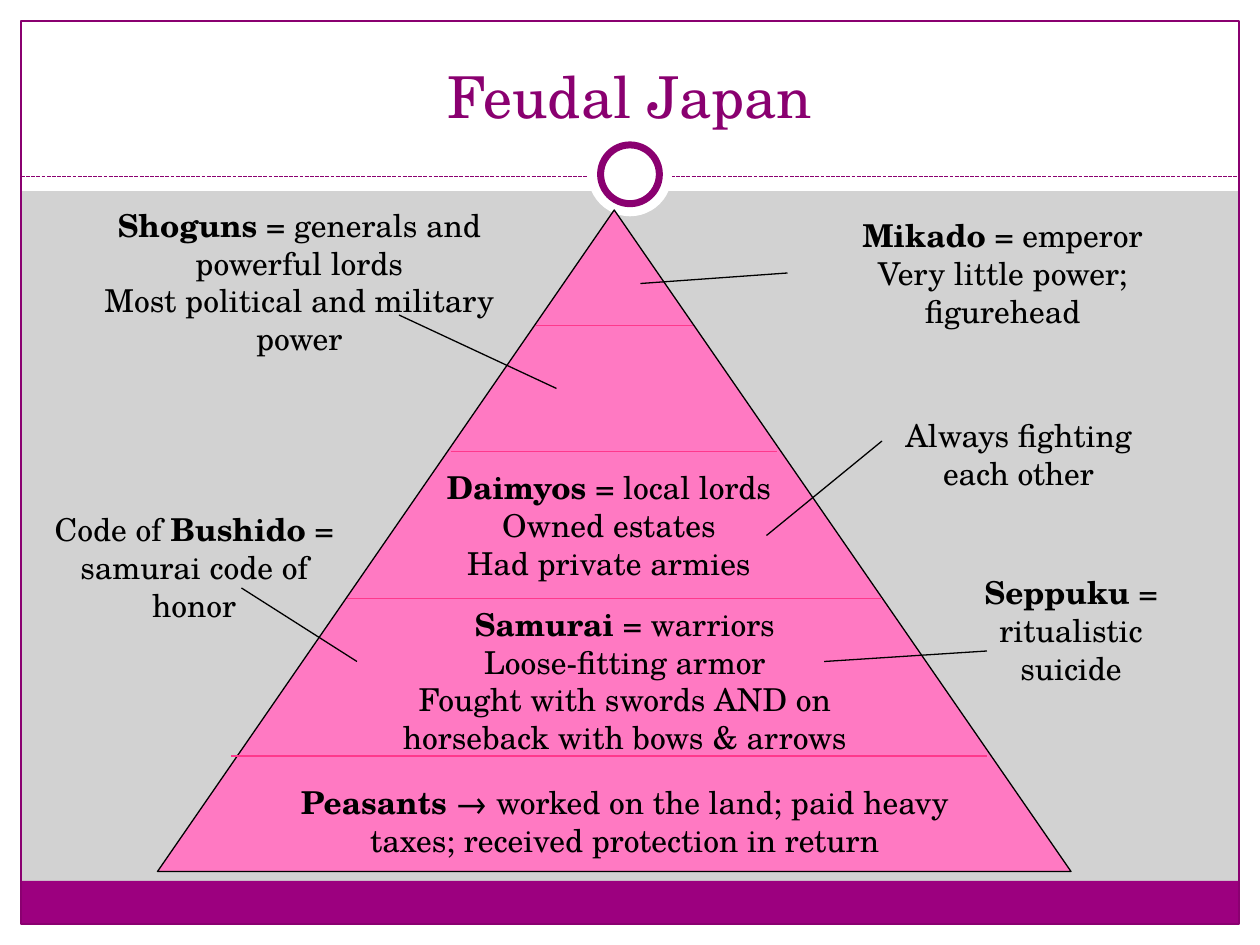
from lxml import etree
from pptx import Presentation
from pptx.dml.color import RGBColor
from pptx.enum.dml import MSO_LINE
from pptx.enum.shapes import MSO_CONNECTOR, MSO_SHAPE
from pptx.enum.text import MSO_ANCHOR, PP_ALIGN
from pptx.oxml.ns import qn
from pptx.util import Pt

PX = 7620  # 120 px to the inch
RECT, OVAL = MSO_SHAPE.RECTANGLE, MSO_SHAPE.OVAL
PEAK = MSO_SHAPE.ISOSCELES_TRIANGLE
LINE, DASH = MSO_CONNECTOR.STRAIGHT, MSO_LINE.SQUARE_DOT
CENTER = PP_ALIGN.CENTER
TOP, BOTTOM = MSO_ANCHOR.TOP, MSO_ANCHOR.BOTTOM
FONT = "TeX Gyre Schola"
PLUM, BLACK, WHITE = "8A0070", "000000", "FFFFFF"
hue = RGBColor.from_string

deck = Presentation()
deck.slide_width, deck.slide_height = 1200 * PX, 900 * PX
slide = deck.slides.add_slide(deck.slide_layouts[6])
slide.background.fill.solid()
slide.background.fill.fore_color.rgb = hue("D2D2D2")
shapes = slide.shapes


def add_form(kind, box, fill=None, edge=None, width=0.75):
    form = shapes.add_shape(kind, *[n * PX for n in box])
    form.shadow.inherit = False
    if fill:
        form.fill.solid()
        form.fill.fore_color.rgb = hue(fill)
    else:
        form.fill.background()
    if edge:
        form.line.color.rgb = hue(edge)
        form.line.width = Pt(width)
    else:
        form.line.fill.background()


def add_line(ends, color):
    line = shapes.add_connector(LINE, *[n * PX for n in ends])
    line.line.color.rgb = hue(color)
    line.line.width = Pt(0.75)
    etree.SubElement(line._element.spPr, qn("a:effectLst"))
    return line


# White margins and header, bottom bar, frame
for box in [(0, 880, 1200, 20), (0, 0, 1200, 182),
            (0, 0, 20, 900), (1180, 0, 20, 900)]:
    add_form(RECT, box, WHITE)
add_form(RECT, (20, 839, 1160, 41), "9C007F")
add_form(RECT, (20, 20, 1160, 860), edge=PLUM)

# Dashed divider with ring
add_line((20, 168, 1180, 168), PLUM).line.dash_style = DASH
add_form(OVAL, (560, 126, 80, 80), WHITE)
add_form(OVAL, (572, 138, 56, 56), WHITE, PLUM, 4)

# Pyramid and its tiers
add_form(PEAK, (150, 200, 870, 630), "FF79C2", BLACK)
for left, right, y in [(510, 660, 310), (430, 740, 430),
                       (330, 840, 570), (220, 940, 720)]:
    add_line((left, y, right, y), "FF388C")

# Leaders from tiers to notes
for ends in [(610, 270, 750, 260), (530, 370, 380, 300),
             (730, 510, 840, 420), (340, 630, 230, 560),
             (785, 630, 940, 620)]:
    add_line(ends, BLACK)

# Title and notes: words between stars are bold
title = ((40, 30, 1120, 100), 33, PLUM, BOTTOM, ["Feudal Japan"])
notes = [
    ((750, 200, 410, 85),
     ["*Mikado* = emperor", "Very little power; figurehead"]),
    ((60, 190, 450, 157),
     ["*Shoguns* = generals and powerful lords",
      "Most political and military power"]),
    ((410, 440, 340, 121),
     ["*Daimyos* = local lords", "Owned estates", "Had private armies"]),
    ((830, 390, 280, 85), ["Always fighting each other"]),
    ((340, 570, 510, 157),
     ["*Samurai* = warriors", "Loose-fitting armor",
      "Fought with swords AND on horseback with bows & arrows"]),
    ((250, 740, 690, 85),
     ["*Peasants *→ worked on the land; paid heavy taxes; "
      "received protection in return"]),
    ((40, 480, 290, 121), ["Code of *Bushido* = samurai code of honor"]),
    ((910, 540, 220, 121), ["*Seppuku* = ritualistic suicide"]),
]
texts = [title] + [(box, 18, BLACK, TOP, rows) for box, rows in notes]
for box, size, color, anchor, rows in texts:
    frame = shapes.add_textbox(*[n * PX for n in box]).text_frame
    frame.word_wrap = True
    frame.vertical_anchor = anchor
    for i, row in enumerate(rows):
        para = frame.add_paragraph() if i else frame.paragraphs[0]
        para.alignment = CENTER
        para.font.name, para.font.size = FONT, Pt(size)
        para.font.color.rgb = hue(color)
        for j, part in enumerate(row.split("*")):
            if part:
                run = para.add_run()
                run.text = part
                run.font.name, run.font.size = FONT, Pt(size)
                run.font.color.rgb = hue(color)
                run.font.bold = j % 2 == 1

deck.save("out.pptx")
